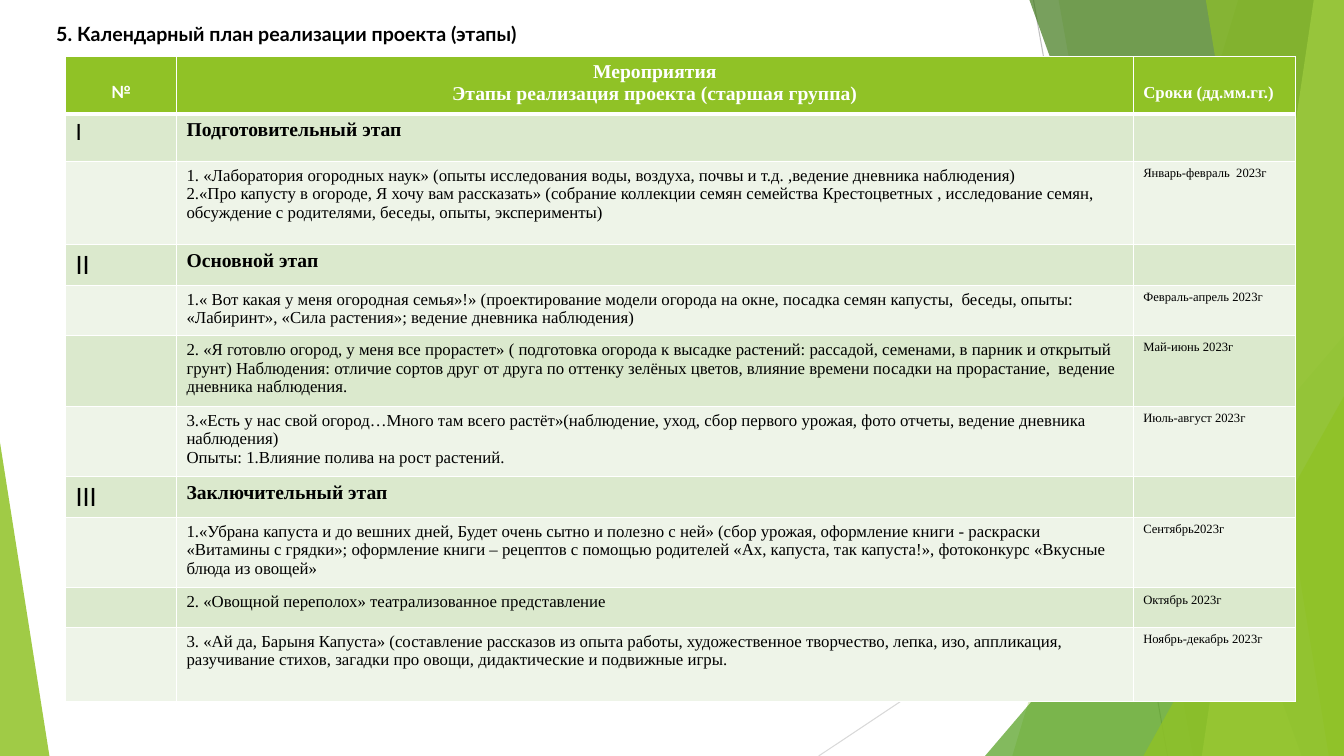
from lxml import etree
from pptx import Presentation
from pptx.dml.color import RGBColor
from pptx.enum.shapes import MSO_CONNECTOR, MSO_SHAPE
from pptx.enum.text import MSO_ANCHOR, PP_ALIGN
from pptx.oxml.ns import qn
from pptx.util import Inches, Pt

STRAIGHT = MSO_CONNECTOR.STRAIGHT
TRIANGLE = MSO_SHAPE.ISOSCELES_TRIANGLE
TOP, BOTTOM = MSO_ANCHOR.TOP, MSO_ANCHOR.BOTTOM
LEFT, CENTER = PP_ALIGN.LEFT, PP_ALIGN.CENTER

SLIDE_W, SLIDE_H = 13.33, 7.5
SERIF, SANS = "Times New Roman", "Lato"
GREEN, BLACK, WHITE = "90C226", "000000", "FFFFFF"
BANDS = ("EEF4E8", "DBE9CD")

COL_WIDTHS = (1.1, 9.49, 1.61)
ROW_HEIGHTS = (0.57, 0.47, 0.83, 0.39, 0.49, 0.68, 0.68, 0.39, 0.68, 0.39, 0.74)
HEADER = ("№", "Мероприятия\nЭтапы реализация проекта (старшая группа)", "Сроки (дд.мм.гг.)")

# Stage rows have a numeral, activity rows have a date
PLAN = (
    ("I", "Подготовительный этап", ""),
    ("", "1. «Лаборатория огородных наук» (опыты исследования воды, воздуха, почвы и т.д. ,"
         "ведение дневника наблюдения)\n"
         "2.«Про капусту в огороде, Я хочу вам рассказать» (собрание коллекции семян семейства "
         "Крестоцветных , исследование семян, обсуждение с родителями, беседы, опыты, "
         "эксперименты)", "Январь-февраль  2023г"),
    ("II", "Основной этап", ""),
    ("", "1.« Вот какая у меня огородная семья»!» (проектирование модели огорода на окне, "
         "посадка семян капусты,  беседы, опыты: «Лабиринт», «Сила растения»; ведение "
         "дневника наблюдения)", "Февраль-апрель 2023г"),
    ("", "2. «Я готовлю огород, у меня все прорастет» ( подготовка огорода к высадке растений: "
         "рассадой, семенами, в парник и открытый грунт) Наблюдения: отличие сортов друг от "
         "друга по оттенку зелёных цветов, влияние времени посадки на прорастание,  ведение "
         "дневника наблюдения.", "Май-июнь 2023г"),
    ("", "3.«Есть у нас свой огород…Много там всего растёт»(наблюдение, уход, сбор первого "
         "урожая, фото отчеты, ведение дневника наблюдения)\n"
         "Опыты: 1.Влияние полива на рост растений.", "Июль-август 2023г"),
    ("III", "Заключительный этап", ""),
    ("", "1.«Убрана капуста и до вешних дней, Будет очень сытно и полезно с ней» (сбор урожая, "
         "оформление книги - раскраски «Витамины с грядки»; оформление книги – рецептов с "
         "помощью родителей «Ах, капуста, так капуста!», фотоконкурс «Вкусные блюда из "
         "овощей»", "Сентябрь2023г"),
    ("", "2. «Овощной переполох» театрализованное представление", "Октябрь 2023г"),
    ("", "3. «Ай да, Барыня Капуста» (составление рассказов из опыта работы, художественное "
         "творчество, лепка, изо, аппликация, разучивание стихов, загадки про овощи, "
         "дидактические и подвижные игры.", "Ноябрь-декабрь 2023г"),
)


def rgb(color):
    return RGBColor.from_string(color)


def style_text(tf, size, font, color=BLACK, bold=False, align=LEFT):
    for p in tf.paragraphs:
        p.alignment = align
        for r in p.runs:
            r.font.size, r.font.name, r.font.bold = Pt(size), font, bold
            r.font.color.rgb = rgb(color)


def paint(sp, color, opacity):
    sp.shadow.inherit = False
    sp.line.fill.background()
    sp.fill.solid()
    sp.fill.fore_color.rgb = rgb(color)
    clr = sp.fill._xPr.find(qn("a:solidFill"))[0]
    etree.SubElement(clr, qn("a:alpha"), val=str(opacity * 1000))


def add_line(s, x1, y1, x2, y2, color):
    line = s.shapes.add_connector(STRAIGHT, Inches(x1), Inches(y1), Inches(x2), Inches(y2))
    line.line.color.rgb = rgb(color)
    line.line.width = Pt(0.75)
    etree.SubElement(line._element.spPr, qn("a:effectLst"))


def add_band(s, top_x, bottom_x, right, bottom, color, opacity):
    """Full-height band with a slanted left edge."""
    builder = s.shapes.build_freeform(Inches(top_x), 0)
    corners = ((right, 0), (right, bottom), (bottom_x, bottom))
    builder.add_line_segments([(Inches(x), Inches(y)) for x, y in corners])
    paint(builder.convert_to_shape(), color, opacity)


def add_triangle(s, x, y, w, h, apex, color, opacity):
    sp = s.shapes.add_shape(TRIANGLE, Inches(x), Inches(y), Inches(w), Inches(h))
    sp.adjustments[0] = apex
    paint(sp, color, opacity)


def add_backdrop(s, w, h):
    # Thin lines
    add_line(s, w - 3.08, 0, w - 1.75, h, "BFBFBF")
    add_line(s, w, 4.03, w - 5.21, h, "D9D9D9")
    # Overlapping facets on the right
    add_band(s, w - 1.05, w - 3.29, w, h, GREEN, 30)
    add_band(s, w - 2.83, w - 1.5, w, h, GREEN, 20)
    add_triangle(s, w - 3.56, h - 4.17, 3.56, 4.17, 1, "54A021", 72)
    add_band(s, w - 3.12, w - 0.42, w, h, "3F7819", 70)
    add_band(s, w - 0.3, w - 1.41, w, h, "C0E474", 70)
    add_band(s, w - 1.37, w - 0.15, w, h, GREEN, 65)
    add_triangle(s, w - 1.99, h - 3.57, 1.99, 3.57, 1, GREEN, 80)
    # Wedge on the left
    add_triangle(s, 0, h - 3.11, 0.49, 3.11, 0, GREEN, 85)


def add_title(s, x, y, w, h):
    tf = s.shapes.add_textbox(Inches(x), Inches(y), Inches(w), Inches(h)).text_frame
    tf.word_wrap = True
    tf.vertical_anchor = TOP
    tf.text = "5. Календарный план реализации проекта (этапы)"
    style_text(tf, 14, SANS, bold=True)


def set_borders(cell, top, bottom):
    tcPr = cell._tc.get_or_add_tcPr()
    edges = (("a:lnL", 1), ("a:lnR", 1), ("a:lnT", top), ("a:lnB", bottom))
    for i, (tag, width) in enumerate(edges):
        ln = etree.Element(qn(tag), w=str(Pt(width)))
        fill = etree.SubElement(ln, qn("a:solidFill"))
        etree.SubElement(fill, qn("a:srgbClr"), val=WHITE)
        tcPr.insert(i, ln)


def fill_cell(cell, text, color, top=1, bottom=1):
    cell.text = text
    cell.fill.solid()
    cell.fill.fore_color.rgb = rgb(color)
    set_borders(cell, top, bottom)
    if not text:
        cell.margin_top = cell.margin_bottom = 0


def add_plan_table(s, x, y):
    frame = s.shapes.add_table(len(ROW_HEIGHTS), len(COL_WIDTHS), Inches(x), Inches(y),
                               Inches(sum(COL_WIDTHS)), Inches(sum(ROW_HEIGHTS)))
    table = frame.table
    for col, width in zip(table.columns, COL_WIDTHS):
        col.width = Inches(width)
    for row, height in zip(table.rows, ROW_HEIGHTS):
        row.height = Inches(height)

    # Header row
    header_styles = ((12, SANS, CENTER), (14, SERIF, CENTER), (12, SERIF, LEFT))
    for c, (text, (size, font, align)) in enumerate(zip(HEADER, header_styles)):
        cell = table.cell(0, c)
        fill_cell(cell, text, GREEN, bottom=3)
        style_text(cell.text_frame, size, font, WHITE, True, align)
        if size == 12:
            cell.vertical_anchor = BOTTOM
            cell.margin_bottom = Inches(0.12)

    # Stages and activities
    for i, texts in enumerate(PLAN, start=1):
        is_stage = bool(texts[0])
        styles = ((16 if i == 1 else 18, SANS, False),
                  (14 if is_stage else 12, SERIF, is_stage), (9, SERIF, False))
        for c, (text, (size, font, bold)) in enumerate(zip(texts, styles)):
            cell = table.cell(i, c)
            fill_cell(cell, text, BANDS[i % 2], top=3 if i == 1 else 1)
            style_text(cell.text_frame, size, font, bold=bold)


def main():
    prs = Presentation()
    prs.slide_width, prs.slide_height = Inches(SLIDE_W), Inches(SLIDE_H)
    s = prs.slides.add_slide(prs.slide_layouts[6])
    add_backdrop(s, SLIDE_W, SLIDE_H)
    add_title(s, 0.46, 0.17, 9.4, 0.38)
    add_plan_table(s, 0.65, 0.56)
    prs.save("out.pptx")


if __name__ == "__main__":
    main()
